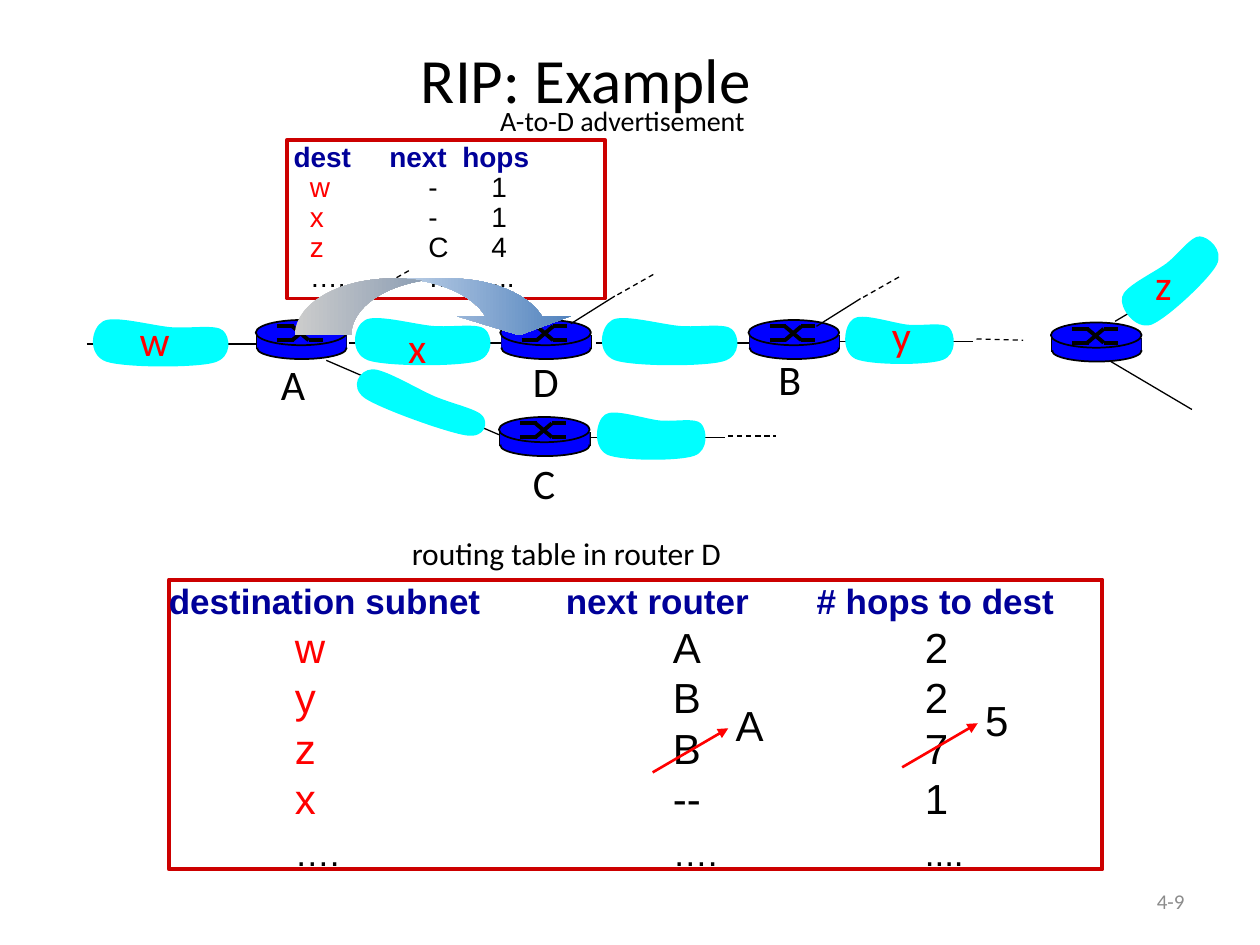
from dataclasses import dataclass

from lxml.etree import SubElement
from pptx import Presentation
from pptx.dml.color import RGBColor
from pptx.enum.dml import MSO_LINE
from pptx.enum.shapes import MSO_CONNECTOR, MSO_SHAPE as SHAPE
from pptx.enum.text import MSO_ANCHOR as ANCHOR, PP_ALIGN as ALIGN
from pptx.oxml.ns import qn
from pptx.util import Inches, Pt


@dataclass(frozen=True)
class Theme:
    ink: str = "000000"
    muted: str = "8C8C8C"
    red: str = "FF0000"
    frame: str = "CC0000"
    header: str = "000099"
    router: str = "0000FF"
    cloud: str = "00FFFF"
    arrow_start: str = "FFFFFF"
    arrow_end: str = "4F81BD"
    body_font: str = "Calibri"
    table_font: str = "Arial"
    title_size: int = 36
    label_size: int = 24
    heading_size: int = 20
    caption_size: int = 18
    note_size: int = 16
    number_size: int = 12
    thin: float = 0.75
    outline: float = 1
    strike: float = 1.5
    heavy: float = 2.25


THEME = Theme()

# Start point, then three control points per curve, as shares of width and height
CLOUD_POINTS = [
    (0.57, 0.23),
    (0.43, 0.19), (0.18, 0), (0.11, 0.12),
    (0.03, 0.24), (0, 0.74), (0.13, 0.88),
    (0.26, 1), (0.74, 1), (0.87, 0.9),
    (1, 0.8), (0.98, 0.4), (0.93, 0.29),
    (0.88, 0.17), (0.71, 0.26), (0.57, 0.23),
]
CLOUDS = [  # left, top, width, height, rotation
    (0.69, 2.5, 1.16, 0.42, 0), (2.77, 2.49, 1.16, 0.42, 0),
    (4.73, 2.49, 1.16, 0.42, 0), (6.67, 2.48, 0.93, 0.42, 0),
    (4.7, 3.24, 0.93, 0.42, 0), (2.76, 3.04, 1.16, 0.31, 19.7),
    (8.81, 2.01, 0.95, 0.42, 316.8),
]
ROUTERS = [(2.03, 2.54), (3.97, 2.54), (5.94, 2.54), (3.96, 3.31), (8.34, 2.56)]
MAIN_LINKS = [(0.69, 2.73), (2.77, 2.72), (4.73, 2.72)]
MAIN_LINK_LENGTH = 1.36
SIDE_LINKS = [
    (6.65, 2.71, 7.72, 2.71), (8.85, 2.55, 9.51, 2.16), (8.8, 2.86, 9.46, 3.25),
    (2.59, 2.86, 3.96, 3.45), (4.68, 3.47, 5.75, 3.47),
]
DASHED_LINKS = [(7.75, 2.69, 8.12, 2.7), (5.78, 3.46, 6.16, 3.46)]
UPWARD_LINKS = [(2.59, 2.54), (4.53, 2.57), (6.48, 2.59)]
SUBNET_LABELS = [("w", 1.01, 2.45), ("x", 3.14, 2.5), ("y", 6.98, 2.41), ("z", 9.07, 2)]
ROUTER_LABELS = [("A", 2.13, 2.8), ("C", 4.13, 3.58), ("D", 4.13, 2.77), ("B", 6.08, 2.76)]
UPDATES = [("A", 5.18, 6.13), ("5", 7.16, 6.09)]

ROUTING_HEADER = ["destination subnet", "next router", "# hops to dest"]
ROUTING_ROWS = [["w", "A", "2"], ["y", "B", "2"], ["z", "B", "7"], ["x", "--", "1"],
                ["….", "….", "...."]]
ADVERT_HEADER = ["dest", "next", "hops"]
ADVERT_ROWS = [["w", "-", "1"], ["x", "-", "1"], ["z", "C", "4"], ["….", "…", "..."]]


def rgb(value):
    return RGBColor.from_string(value)


def style_span(span, size, color, font, bold=False):
    span.font.size = Pt(size)
    span.font.name = font
    span.font.bold = bold
    span.font.color.rgb = rgb(color)


def add_label(page, text, left, top, width=0.45, height=0.5, size=THEME.label_size,
              color=THEME.ink, font=THEME.body_font, align=ALIGN.LEFT,
              anchor=ANCHOR.TOP, wrap=False):
    box = page.shapes.add_textbox(Inches(left), Inches(top), Inches(width), Inches(height))
    frame = box.text_frame
    frame.word_wrap = wrap
    frame.vertical_anchor = anchor
    frame.text = text
    para = frame.paragraphs[0]
    para.alignment = align
    style_span(para.runs[0], size, color, font)


def add_line(page, x1, y1, x2, y2, width=THEME.thin, color=THEME.ink, dashed=False, arrow=False):
    line = page.shapes.add_connector(
        MSO_CONNECTOR.STRAIGHT, Inches(x1), Inches(y1), Inches(x2), Inches(y2))
    line.line.width = Pt(width)
    line.line.color.rgb = rgb(color)
    if dashed:
        line.line.dash_style = MSO_LINE.DASH
    properties = line._element.spPr
    if arrow:
        SubElement(properties.find(qn("a:ln")), qn("a:tailEnd"), type="triangle")
    SubElement(properties, qn("a:effectLst"))


def add_preset(page, kind, left, top, width, height, fill=None, line=None, weight=THEME.outline):
    shape = page.shapes.add_shape(
        kind, Inches(left), Inches(top), Inches(width), Inches(height))
    shape.shadow.inherit = False
    if fill:
        shape.fill.solid()
        shape.fill.fore_color.rgb = rgb(fill)
    else:
        shape.fill.background()
    if line:
        shape.line.color.rgb = rgb(line)
        shape.line.width = Pt(weight)
    else:
        shape.line.fill.background()
    return shape


def add_cloud(page, left, top, width, height, rotation):
    """Outline the control points, then turn each three segments into one curve."""
    points = [(Inches(left + x * width), Inches(top + y * height)) for x, y in CLOUD_POINTS]
    builder = page.shapes.build_freeform(*points[0])
    builder.add_line_segments(points[1:], close=True)
    cloud = builder.convert_to_shape()
    cloud.shadow.inherit = False
    cloud.fill.solid()
    cloud.fill.fore_color.rgb = rgb(THEME.cloud)
    cloud.line.fill.background()
    cloud.rotation = rotation
    segments = list(cloud._element.iter(qn("a:lnTo")))
    for start in range(0, len(segments), 3):
        curve = segments[start].makeelement(qn("a:cubicBezTo"))
        segments[start].addprevious(curve)
        for segment in segments[start:start + 3]:
            curve.append(segment[0])
            segment.getparent().remove(segment)


def add_router(page, left, top):
    add_preset(page, SHAPE.OVAL, left + 0.01, top + 0.14, 0.71, 0.17, THEME.router, THEME.ink)
    for x in (left + 0.01, left + 0.72):
        add_line(page, x, top + 0.12, x, top + 0.23, THEME.outline)
    add_preset(page, SHAPE.RECTANGLE, left + 0.01, top + 0.12, 0.71, 0.1, THEME.router)
    add_preset(page, SHAPE.OVAL, left, top, 0.72, 0.2, THEME.router, THEME.ink)
    high, low = top + 0.05, top + 0.16
    for start, end in ((high, low), (low, high)):
        for x1, y1, x2, y2 in ((0.17, start, 0.3, start), (0.29, start, 0.42, end),
                               (0.42, end, 0.53, end)):
            add_line(page, left + x1, y1, left + x2, y2, THEME.heavy)


def add_framed_rows(page, bounds, header, rows, header_stops, row_stops, header_size,
                    row_size, pitch):
    """Frame with tabbed columns; the last row holds ellipses at header size."""
    box = add_preset(page, SHAPE.RECTANGLE, *bounds, line=THEME.frame, weight=THEME.heavy)
    frame = box.text_frame
    frame.margin_left = frame.margin_right = frame.margin_top = frame.margin_bottom = 0
    frame.vertical_anchor = ANCHOR.TOP
    frame.word_wrap = True
    for index, cells in enumerate([header] + rows):
        is_header, is_last = index == 0, index == len(rows)
        para = frame.paragraphs[0] if is_header else frame.add_paragraph()
        para.alignment = ALIGN.LEFT
        if not is_header:
            para.line_spacing = Pt(pitch)
        stops = header_stops if is_header else row_stops
        tabs = SubElement(para._p.get_or_add_pPr(), qn("a:tabLst"))
        for stop in filter(None, stops):
            SubElement(tabs, qn("a:tab"), pos=str(Inches(stop)), algn="l")
        size = header_size if is_header or is_last else row_size
        for stop, cell in zip(stops, cells):
            span = para.add_run()
            span.text = ("\t" if stop else "") + cell
            is_subnet = cell is cells[0] and not is_last
            color = THEME.header if is_header else THEME.red if is_subnet else THEME.ink
            style_span(span, size, color, THEME.table_font, is_header)


def add_network(page):
    for x, y in MAIN_LINKS:
        add_line(page, x, y, x + MAIN_LINK_LENGTH, y, THEME.outline)
    for link in SIDE_LINKS:
        add_line(page, *link)
    for cloud in CLOUDS:
        add_cloud(page, *cloud)
    for router in ROUTERS:
        add_router(page, *router)
    for link in DASHED_LINKS:
        add_line(page, *link, dashed=True)
    for x, y in UPWARD_LINKS:
        add_line(page, x, y, x + 0.35, y - 0.22)
        add_line(page, x + 0.37, y - 0.23, x + 0.67, y - 0.4, dashed=True)
    for text, left, top in SUBNET_LABELS:
        add_label(page, text, left, top, width=0.4, color=THEME.red)
    for text, left, top in ROUTER_LABELS:
        add_label(page, text, left, top)


def add_advertisement(page):
    add_framed_rows(page, (2.28, 1.11, 2.52, 1.26), ADVERT_HEADER, ADVERT_ROWS,
                    (0.05, 0.81, 1.39), (0.18, 1.12, 1.62), THEME.note_size, THEME.note_size, 17.1)
    add_label(page, "A-to-D advertisement", 3.87, 0.77, 2.49, 0.37, THEME.note_size, wrap=True)
    arrow = add_preset(page, SHAPE.CURVED_DOWN_ARROW, 2.34, 2.21, 2.23, 0.45)
    for index, value in enumerate((0.996, 1.992, 0.333)):
        arrow.adjustments[index] = value
    arrow.fill.gradient()
    arrow.fill.gradient_angle = 0
    for stop, color in zip(arrow.fill.gradient_stops, (THEME.arrow_start, THEME.arrow_end)):
        stop.color.rgb = rgb(color)


def main():
    deck = Presentation()
    deck.slide_width, deck.slide_height = Inches(10), Inches(7.5)
    page = deck.slides.add_slide(deck.slide_layouts[6])
    add_label(page, "4-9", 7.17, 6.95, 2.33, 0.4, THEME.number_size, THEME.muted,
              align=ALIGN.RIGHT, anchor=ANCHOR.MIDDLE, wrap=True)
    add_label(page, "RIP: Example", 0.4, 0, 8.5, 1.25, THEME.title_size,
              align=ALIGN.CENTER, anchor=ANCHOR.MIDDLE, wrap=True)
    add_framed_rows(page, (1.34, 4.6, 7.41, 2.3), ROUTING_HEADER, ROUTING_ROWS,
                    (0, 3.15, 5.14), (1, 4, 6), THEME.heading_size, THEME.label_size, 28.8)
    add_label(page, "routing table in router D", 3.17, 4.19, 3.07, 0.4, THEME.caption_size)
    add_network(page)
    for text, x, y in UPDATES:
        add_line(page, x, y, x + 0.6, y - 0.35, THEME.strike, THEME.red, arrow=True)
        add_label(page, text, x + 0.56, y - 0.63, width=0.4, font=THEME.table_font)
    add_advertisement(page)
    deck.save("out.pptx")


if __name__ == "__main__":
    main()
